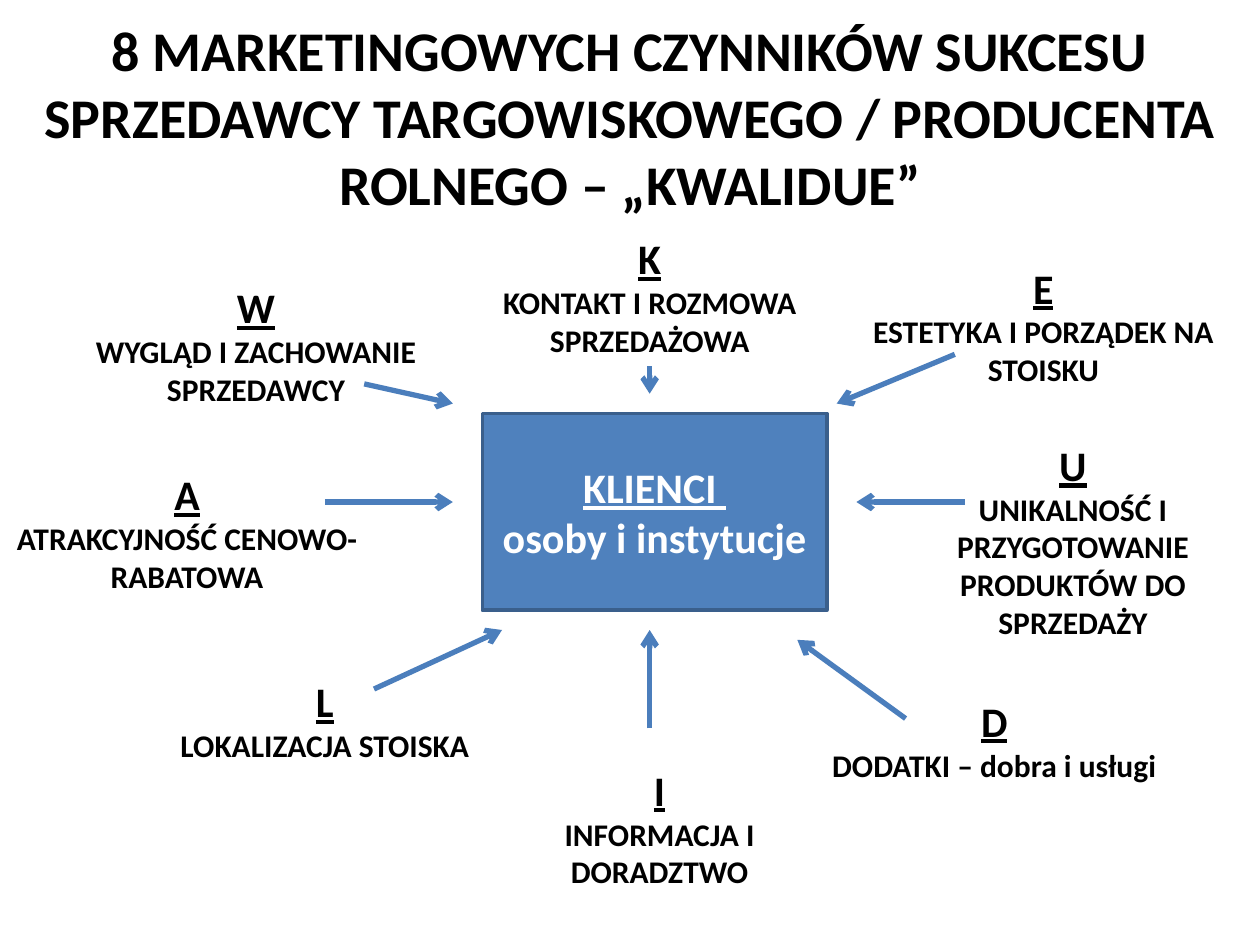
from lxml import etree
from pptx import Presentation
from pptx import util as u
from pptx.dml.color import RGBColor
from pptx.enum import shapes, text
from pptx.oxml.ns import qn

BLACK = RGBColor(0x00, 0x00, 0x00)
WHITE = RGBColor(0xFF, 0xFF, 0xFF)
BOX_BLUE = RGBColor(0x4F, 0x81, 0xBD)
EDGE_BLUE = RGBColor(0x3A, 0x5F, 0x8C)
ARROW_BLUE = RGBColor(0x4B, 0x7E, 0xBC)

prs = Presentation()
prs.slide_width, prs.slide_height = u.Inches(10), u.Inches(7.5)
CELL = prs.slide_width / 128  # square grid: 128 columns by 96 rows


def grid(*cells):
    return [u.Emu(round(n * CELL)) for n in cells]


def write(frame, lines):
    """Fill a frame with centred bold lines of (words, size, colour, underlined)."""
    frame.word_wrap = True
    for i, (words, size, colour, underlined) in enumerate(lines):
        line = frame.paragraphs[0] if i == 0 else frame.add_paragraph()
        line.alignment = text.PP_ALIGN.CENTER
        run = line.add_run()
        run.text = words
        run.font.name, run.font.size = "Calibri", u.Pt(size)
        run.font.bold, run.font.underline = True, underlined
        run.font.color.rgb = colour


slide = prs.slides.add_slide(prs.slide_layouts[5])

title = slide.shapes.title
title.left, title.top, title.width, title.height = grid(0, 3.8, 128, 16)
title.text_frame.vertical_anchor = text.MSO_ANCHOR.MIDDLE
title.text_frame.auto_size = text.MSO_AUTO_SIZE.NONE
write(title.text_frame, [(
    "8 MARKETINGOWYCH CZYNNIKÓW SUKCESU SPRZEDAWCY TARGOWISKOWEGO / "
    "PRODUCENTA ROLNEGO – „KWALIDUE”", 32, BLACK, False)])

clients = slide.shapes.add_shape(shapes.MSO_SHAPE.RECTANGLE, *grid(49, 42, 35, 20))
clients.shadow.inherit = False
clients.fill.solid()
clients.fill.fore_color.rgb = BOX_BLUE
clients.line.color.rgb = EDGE_BLUE
clients.line.width = u.Pt(2)
clients.text_frame.vertical_anchor = text.MSO_ANCHOR.MIDDLE
write(clients.text_frame, [("KLIENCI ", 24, WHITE, True),
                           ("osoby i instytucje", 24, WHITE, False)])

# letter, factor, column, row, height in rows, arrow start, arrow end
factors = [
    ("K", "KONTAKT I ROZMOWA SPRZEDAŻOWA", 47, 23, 14.2, (66, 37.2), (66, 40)),
    ("W", "WYGLĄD I ZACHOWANIE SPRZEDAWCY", 7, 28, 14.2, (37, 39), (46, 41)),
    ("A", "ATRAKCYJNOŚĆ CENOWO-RABATOWA", 0, 47, 14.2, (33, 51), (46, 51)),
    ("L", "LOKALIZACJA STOISKA", 14, 68, 10.4, (38, 70), (51, 64)),
    ("I", "INFORMACJA I DORADZTWO", 48, 77, 14.2, (66, 74), (66, 64)),
    ("D", "DODATKI – dobra i usługi", 82, 70, 10.4, (92, 73), (81, 65)),
    ("U", "UNIKALNOŚĆ I PRZYGOTOWANIE PRODUKTÓW DO SPRZEDAŻY",
     90, 44, 22, (98, 51), (87, 51)),
    ("E", "ESTETYKA I PORZĄDEK NA STOISKU", 87, 26, 14.2, (97, 36), (85, 41)),
]

for letter, factor, column, row, rows, start, end in factors:
    label = slide.shapes.add_textbox(*grid(column, row, 38, rows))
    label.text_frame.auto_size = text.MSO_AUTO_SIZE.SHAPE_TO_FIT_TEXT
    write(label.text_frame, [(letter, 24, BLACK, True), (factor, 18, BLACK, False)])

for *_, start, end in factors:
    arrow = slide.shapes.add_connector(shapes.MSO_CONNECTOR.STRAIGHT, *grid(*start, *end))
    arrow.line.color.rgb = ARROW_BLUE
    arrow.line.width = u.Pt(3)
    etree.SubElement(arrow.line._get_or_add_ln(), qn("a:tailEnd"), type="arrow")
    etree.SubElement(arrow._element.spPr, qn("a:effectLst"))

prs.save("out.pptx")
